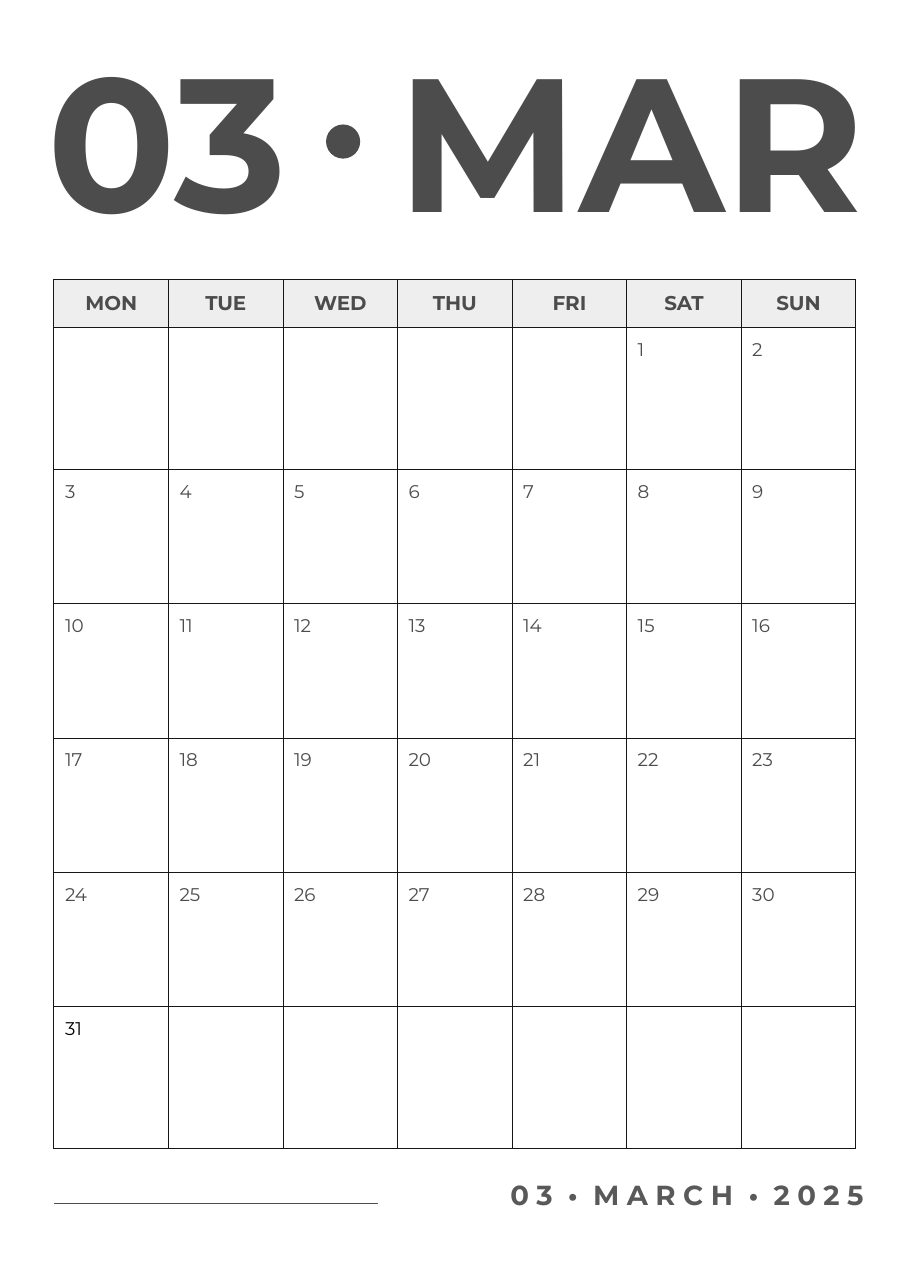
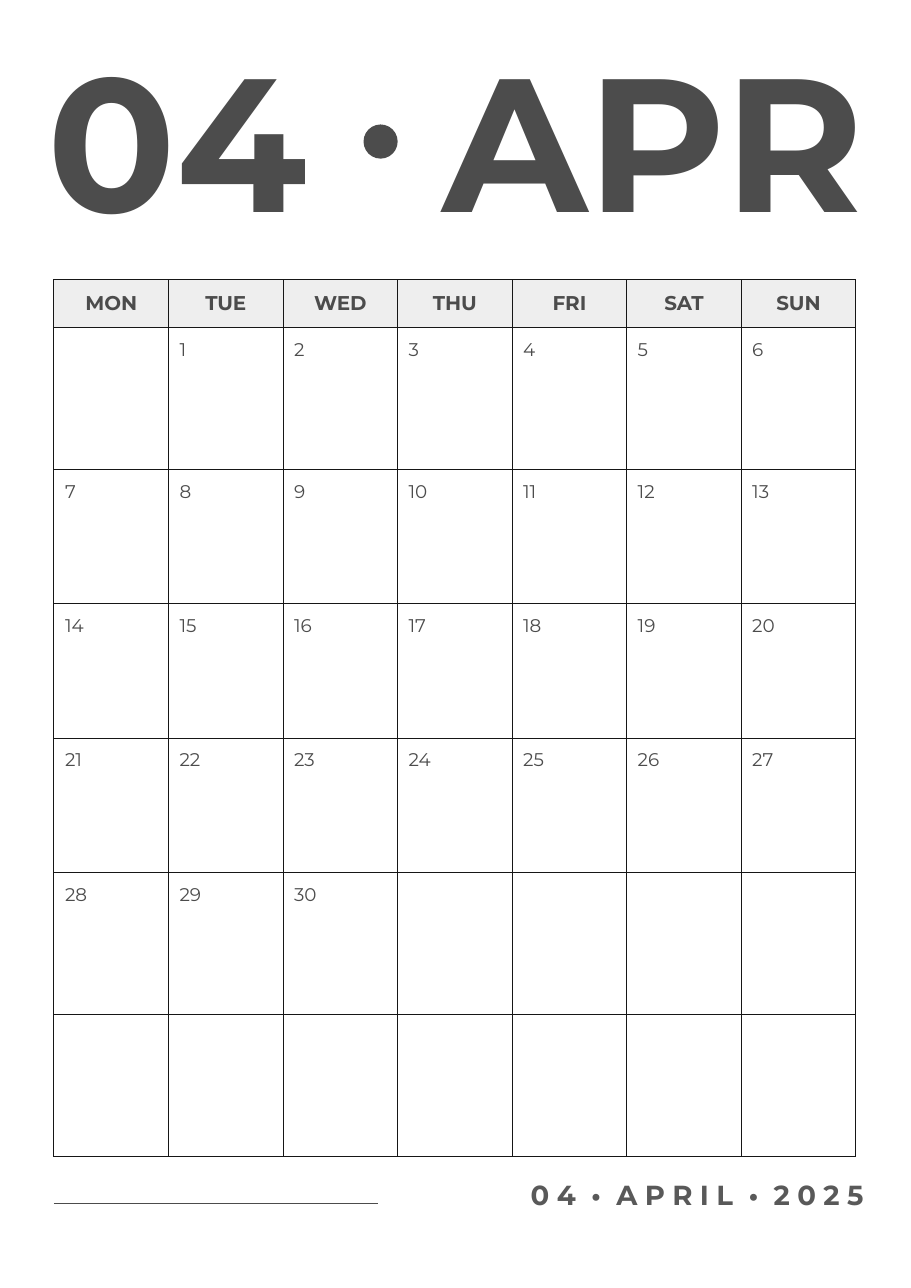
import pptx
import pptx.dml.color
import pptx.enum.shapes
import pptx.enum.text
import pptx.oxml.ns
import pptx.util
from lxml import etree

Inches = pptx.util.Inches
ALIGN = pptx.enum.text.PP_ALIGN
ANCHOR = pptx.enum.text.MSO_ANCHOR
qn = pptx.oxml.ns.qn

FONT = "Montserrat"
INK = "4C4C4C"
FOOTER_INK = "595959"
GRID = "161616"
HEADER_FILL = "EEEEEE"

WEEKDAYS = ["MON", "TUE", "WED", "THU", "FRI", "SAT", "SUN"]
MONTHS = [
    {"number": "03", "short": "MAR", "footer": "03 • MARCH • 2025",
     "first_weekday": 5, "days": 31, "dot_left": 2.96, "day_colors": {31: "000000"}},
    {"number": "04", "short": "APR", "footer": "04 • APRIL • 2025",
     "first_weekday": 1, "days": 30, "dot_left": 3.3, "day_colors": {}},
]

WEEKS = 6
LEFT, GRID_TOP, COL_W = 0.49, 2.54, 1.04
HEADER_H, DATE_H, BLANK_DATE_H, NOTE_H = 0.43, 0.41, 0.48, 0.81
PAD = 0.1
FOOTER_SPACING = 4.9


def rgb(color):
    return pptx.dml.color.RGBColor.from_string(color)


def write(tf, text, size=12, color=INK, bold=False, align=ALIGN.LEFT, spacing=0):
    p = tf.paragraphs[0]
    p.alignment = align
    pieces = text.replace(" ", "| |").split("|") if spacing else [text]
    for piece in pieces:
        r = p.add_run()
        r.text = piece
        r.font.name = FONT
        r.font.size = pptx.util.Pt(size)
        r.font.bold = bold
        r.font.color.rgb = rgb(color)
        if spacing and piece != " ":
            r.font._element.set("spc", str(round(spacing * 100)))


def add_text(s, box, text, **fmt):
    tf = s.shapes.add_textbox(*map(Inches, box)).text_frame
    tf.word_wrap = True
    tf.margin_left = tf.margin_right = tf.margin_top = tf.margin_bottom = 0
    write(tf, text, **fmt)


def style_cell(cell, edges, fill=None):
    tcPr = cell._tc.get_or_add_tcPr()
    for edge in "LRTB":
        ln = etree.SubElement(tcPr, qn("a:ln" + edge), w=str(pptx.util.Pt(0.75)))
        if edge in edges:
            solid = etree.SubElement(ln, qn("a:solidFill"))
            etree.SubElement(solid, qn("a:srgbClr"), val=GRID)
        else:
            etree.SubElement(ln, qn("a:noFill"))
    if fill:
        cell.fill.solid()
        cell.fill.fore_color.rgb = rgb(fill)
    else:
        cell.fill.background()


def fill_cell(cell, text, anchor=ANCHOR.TOP, **fmt):
    cell.margin_left = cell.margin_right = Inches(PAD)
    cell.margin_top = cell.margin_bottom = Inches(PAD)
    cell.vertical_anchor = anchor
    write(cell.text_frame, text, **fmt)


def add_calendar(s, month):
    days = [[week * 7 + col - month["first_weekday"] + 1 for col in range(7)]
            for week in range(WEEKS)]
    heights = [HEADER_H]
    for week in days:
        full = all(1 <= day <= month["days"] for day in week)
        heights += [DATE_H if full else BLANK_DATE_H, NOTE_H]

    frame = s.shapes.add_table(len(heights), 7, Inches(LEFT), Inches(GRID_TOP),
                               Inches(7 * COL_W), Inches(sum(heights)))
    table = frame.table
    table.first_row = table.horz_banding = False
    for row, height in zip(table.rows, heights):
        row.height = Inches(height)
    for col, weekday in enumerate(WEEKDAYS):
        table.columns[col].width = Inches(COL_W)
        header = table.cell(0, col)
        style_cell(header, "LRTB", HEADER_FILL)
        fill_cell(header, weekday, ANCHOR.MIDDLE, size=13, bold=True, align=ALIGN.CENTER)
        for week in range(WEEKS):
            date, note = (table.cell(2 * week + i, col) for i in (1, 2))
            style_cell(date, "LRT")
            style_cell(note, "LRB")
            day = days[week][col]
            if 1 <= day <= month["days"]:
                fill_cell(date, str(day), color=month["day_colors"].get(day, INK))


def add_title(s, month):
    add_text(s, (0.43, 0.21, 2.69, 2.09), month["number"], size=124, bold=True)
    add_text(s, (3.5, 0.21, 4.34, 2.09), month["short"], size=124, bold=True,
             align=ALIGN.RIGHT)
    dot = s.shapes.add_shape(pptx.enum.shapes.MSO_SHAPE.OVAL, Inches(month["dot_left"]),
                             Inches(1.13), Inches(0.31), Inches(0.31))
    dot.shadow.inherit = False
    dot.fill.solid()
    dot.fill.fore_color.rgb = rgb(INK)
    dot.line.fill.background()


def add_footer(s, month):
    rule = s.shapes.add_connector(pptx.enum.shapes.MSO_CONNECTOR.STRAIGHT, Inches(LEFT),
                                  Inches(10.92), Inches(3.43), Inches(10.92))
    rule.line.color.rgb = rgb(INK)
    rule.line.width = pptx.util.Pt(0.75)
    etree.SubElement(rule._element.spPr, qn("a:effectLst"))
    add_text(s, (3.79, 10.69, 4.05, 0.3), month["footer"], size=18, color=FOOTER_INK,
             bold=True, align=ALIGN.RIGHT, spacing=FOOTER_SPACING)


def main():
    prs = pptx.Presentation()
    prs.slide_width, prs.slide_height = Inches(8.27), Inches(11.69)
    for month in MONTHS:
        s = prs.slides.add_slide(prs.slide_layouts[6])
        add_calendar(s, month)
        add_title(s, month)
        add_footer(s, month)
    prs.save("out.pptx")


if __name__ == "__main__":
    main()
